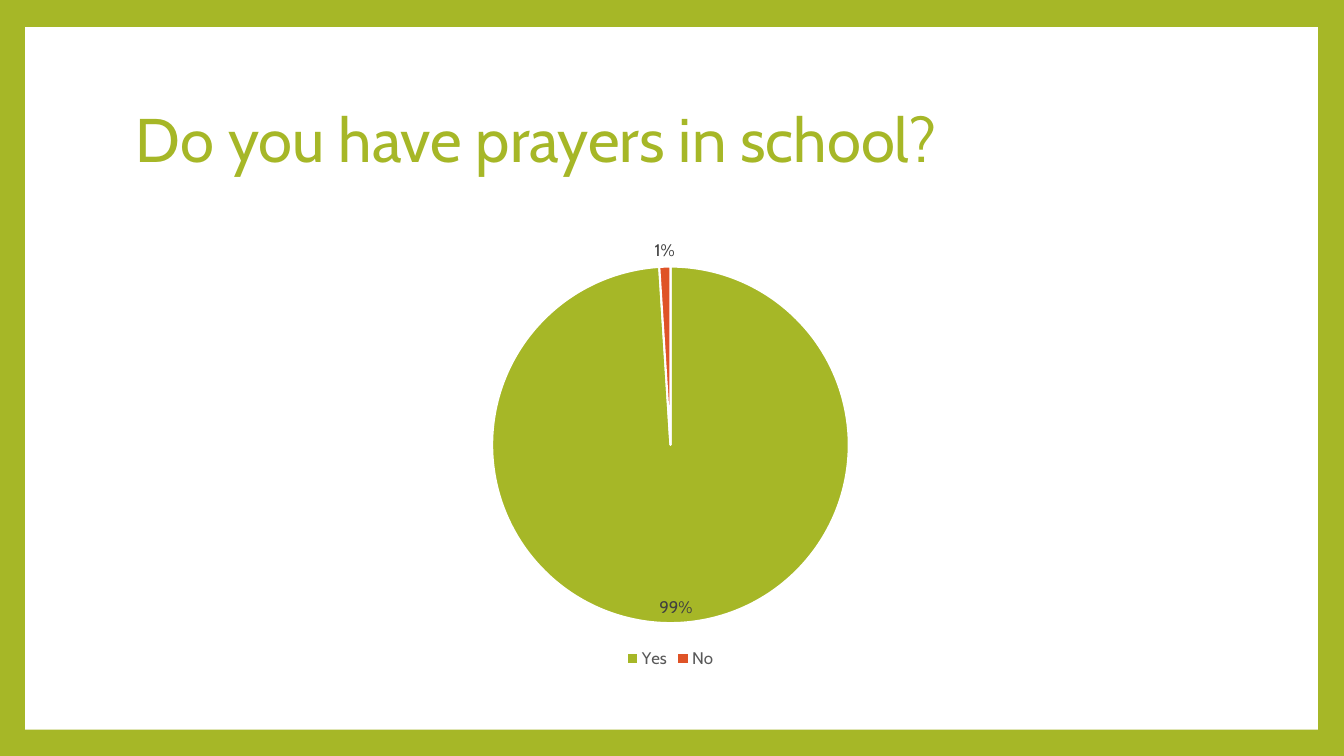
import pptx
import pptx.chart.data
import pptx.dml.color
import pptx.enum.chart
import pptx.enum.shapes
import pptx.enum.text
import pptx.util
from pptx.util import Inches

# Content
TITLE = "Do you have prayers in school?"
ANSWERS = {"Yes": 99, "No": 1}

THEME = {
    "font": "Cabin",
    "green": "A6B727",
    "red": "DF5327",
    "white": "FFFFFF",
    "label": "404040",
    "legend": "595959",
    "title_size": 44,
    "chart_size": 12,
}
SLIDE_SIZE = (13.33, 7.5)
PANEL_BOX = (0.25, 0.27, 12.82, 6.97)
TITLE_BOX = (1.25, 0.67, 10.8, 1.48)
CHART_BOX = (1.25, 2.25, 10.8, 4.42)


def inches(box):
    return [Inches(length) for length in box]


def color(name):
    return pptx.dml.color.RGBColor.from_string(THEME[name])


def apply(target, values):
    for name, value in values.items():
        setattr(target, name, value)


def fill(format_object, name):
    format_object.fill.solid()
    format_object.fill.fore_color.rgb = color(name)


def style_font(font, size, color_name):
    apply(font, {"name": THEME["font"], "size": pptx.util.Pt(THEME[size]), "bold": False})
    font.color.rgb = color(color_name)


def add_panel(slide):
    fill(slide.background, "green")
    panel = slide.shapes.add_shape(
        pptx.enum.shapes.MSO_SHAPE.RECTANGLE, *inches(PANEL_BOX))
    panel.shadow.inherit = False
    fill(panel, "white")
    panel.line.fill.background()


def add_title(slide):
    frame = slide.shapes.add_textbox(*inches(TITLE_BOX)).text_frame
    apply(frame, {"word_wrap": True,
                  "vertical_anchor": pptx.enum.text.MSO_ANCHOR.MIDDLE})
    paragraph = frame.paragraphs[0]
    paragraph.line_spacing = 0.9
    run = paragraph.add_run()
    run.text = TITLE
    style_font(run.font, "title_size", "green")


def add_answer_chart(slide):
    data = pptx.chart.data.CategoryChartData()
    data.categories = list(ANSWERS)
    data.add_series("Series 1", list(ANSWERS.values()))
    chart = slide.shapes.add_chart(
        pptx.enum.chart.XL_CHART_TYPE.PIE, *inches(CHART_BOX), data).chart
    apply(chart, {"has_title": False, "has_legend": True})
    style_font(chart.font, "chart_size", "legend")

    # Legend
    apply(chart.legend, {"position": pptx.enum.chart.XL_LEGEND_POSITION.BOTTOM,
                         "include_in_layout": False})
    style_font(chart.legend.font, "chart_size", "legend")

    # Slices
    plot = chart.plots[0]
    plot.vary_by_categories = True
    for index, name in enumerate(("green", "red")):
        slice_format = plot.series[0].points[index].format
        fill(slice_format, name)
        slice_format.line.color.rgb = color("white")
        slice_format.line.width = pptx.util.Pt(1.5)

    # Percentage labels
    labels = plot.series[0].data_labels
    apply(labels, {"show_percentage": True, "show_value": False,
                   "number_format": "0%", "number_format_is_linked": False,
                   "position": pptx.enum.chart.XL_LABEL_POSITION.BEST_FIT})
    style_font(labels.font, "chart_size", "label")


def main():
    presentation = pptx.Presentation()
    presentation.slide_width, presentation.slide_height = inches(SLIDE_SIZE)
    slide = presentation.slides.add_slide(presentation.slide_layouts[6])
    add_panel(slide)
    add_title(slide)
    add_answer_chart(slide)
    presentation.save("out.pptx")


if __name__ == "__main__":
    main()
